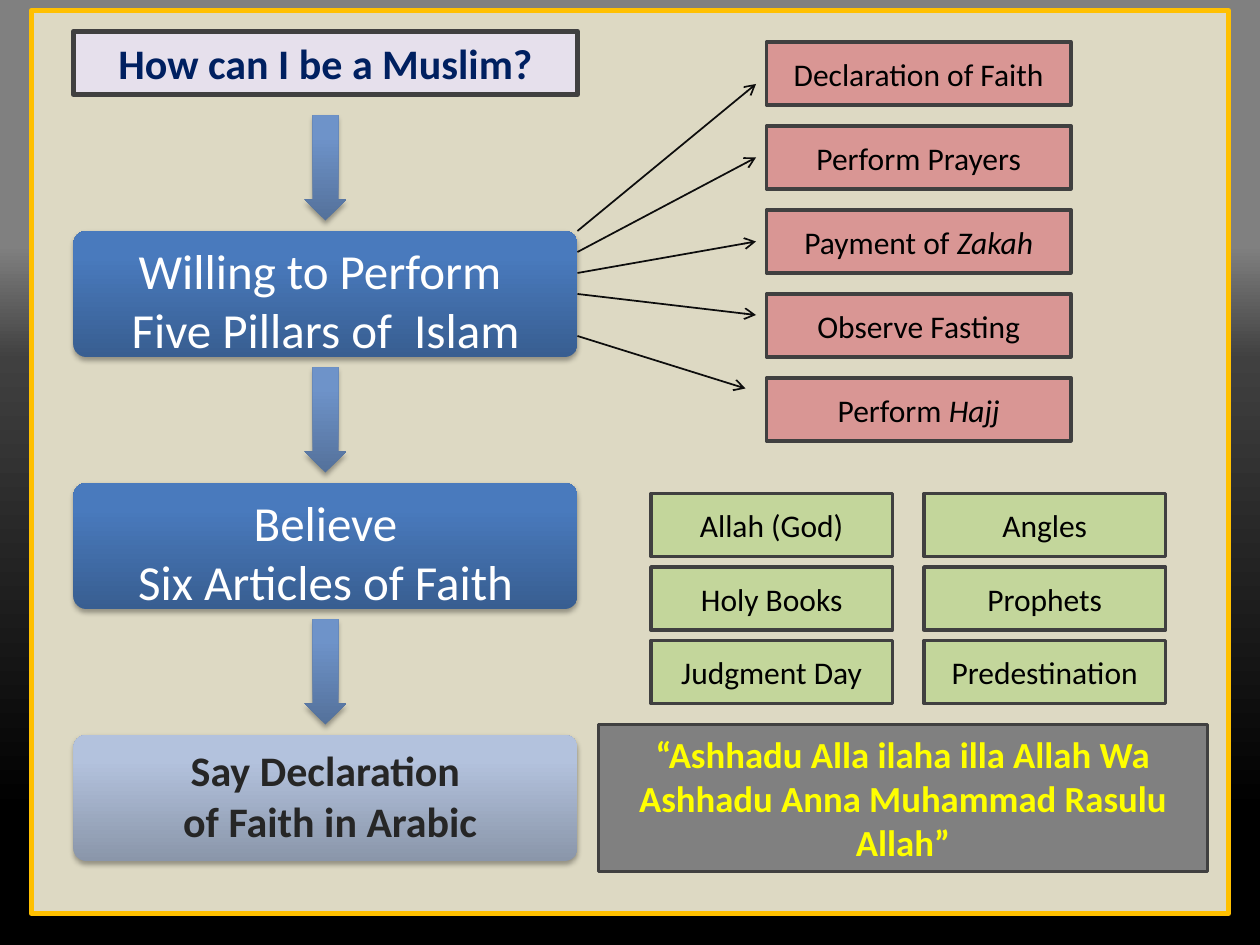
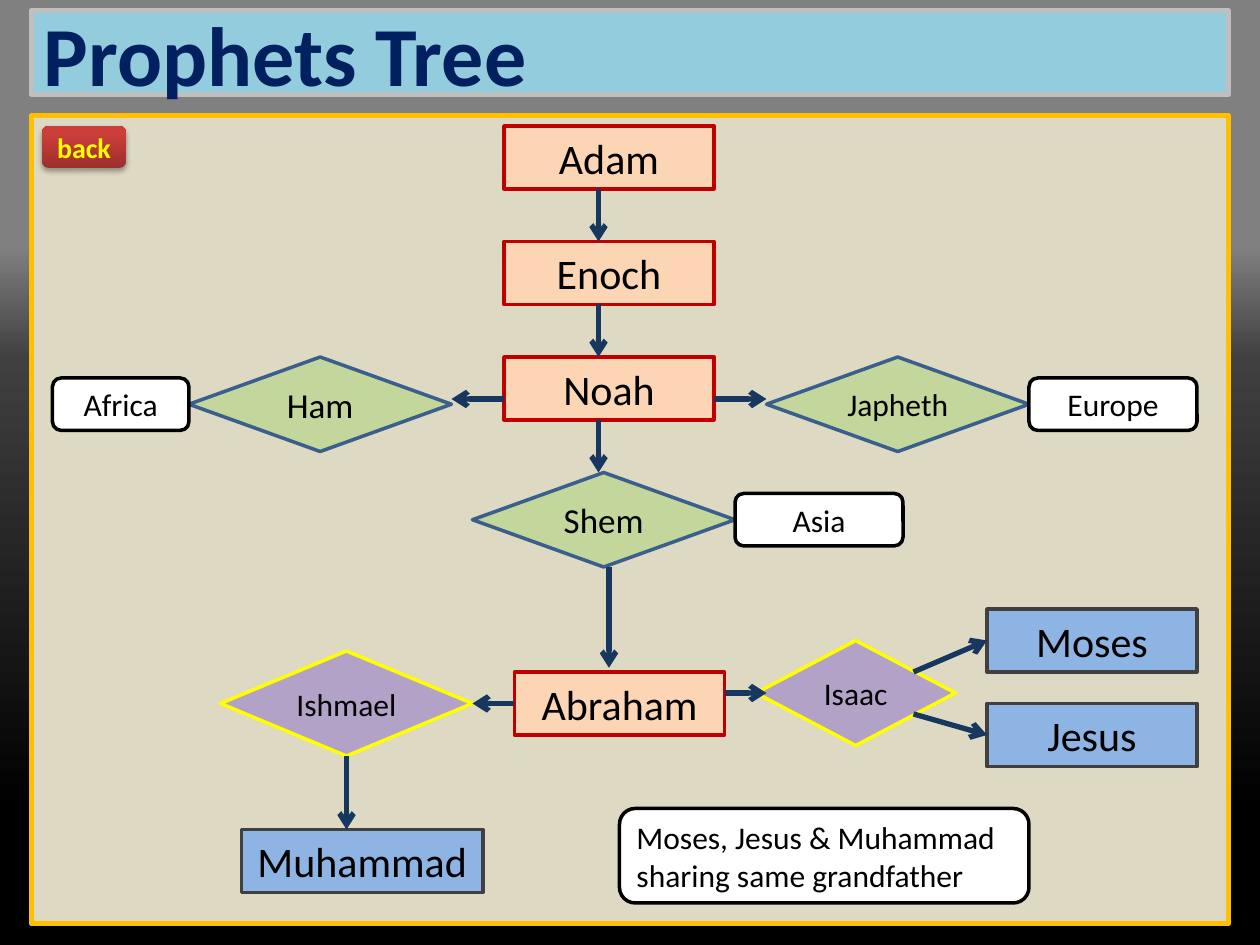
from copy import deepcopy
from dataclasses import dataclass
from typing import NamedTuple

from lxml.etree import SubElement
from pptx import Presentation
from pptx.dml.color import RGBColor as Rgb
from pptx.enum.shapes import MSO_CONNECTOR as Connector, MSO_SHAPE as Kind
from pptx.enum.text import MSO_ANCHOR as Anchor, PP_ALIGN as Align
from pptx.oxml.ns import qn
from pptx.util import Cm, Pt

GRID = Cm(2.54) / 12  # every place and size below counts these steps
TOP, LEFT, BOTTOM, RIGHT = range(4)


class Style(NamedTuple):
    """A pair of fill colours makes a bottom-to-top gradient with a soft shadow."""
    fill: str | tuple
    line: str = ""
    line_width: float = 2
    size: float = 18
    color: str = "000000"
    bold: bool = False
    align: Align = Align.CENTER
    anchor: Anchor = Anchor.MIDDLE


@dataclass(frozen=True)
class Theme:
    font = "Calibri"
    backdrop = ((0.26, "808080"), (0.38, "404040"), (0.86, "000000"))
    frame = Style("DDD9C3", "FFC000", 3)
    question = Style("E6E0EC", "404040", 3, 24, "002060", True)
    title = Style("93CDDD", "BFBFBF", 3, 48, "002060", True, Align.LEFT)
    step = Style(("385E91", "497ABD"), size=28, color="FFFFFF", anchor=Anchor.TOP)
    last_step = Style(("8A96AA", "B3C2DD"), size=24, color="262626", bold=True,
                      anchor=Anchor.TOP)
    step_arrow = Style(("54719B", "6E93C9"))
    pillar = Style("D99694", "404040")
    article = Style("C3D69B", "404040")
    declaration = Style("808080", "404040", 2, 21, "FFFF00", True)
    forefather = Style("FCD5B5", "C00000", 2, 24)
    messenger = Style("8EB4E3", "404040", 2, 24)
    son_of_noah = Style("C3D69B", "3A5F8C", 2, 20)
    son_of_abraham = Style("B3A2C7", "FFFF00")
    region = Style("FFFFFF", "000000")
    note = Style("FFFFFF", "000000", align=Align.LEFT)
    back = Style(("9C2F2D", "CB3E3A"), size=16, color="FFFF00", bold=True)
    pillar_link = ("0D0D0D", 1)
    descent = ("17375E", 3)


theme = Theme()


def add_box(slide, kind, place, style, text="", italic_end=""):
    box = slide.shapes.add_shape(kind, *(round(n * GRID) for n in place))
    box.shadow.inherit = False
    if isinstance(style.fill, tuple):
        box.fill.gradient()
        box.fill.gradient_angle = 90
        for stop, position, color in zip(box.fill.gradient_stops, (0, 0.8), style.fill):
            stop.position = position
            stop.color.rgb = Rgb.from_string(color)
        effects = box.element.spPr.find(qn("a:effectLst"))
        shadow = SubElement(effects, qn("a:outerShdw"), blurRad="39370", dist="22860",
                            dir="5400000", rotWithShape="0")
        shade = SubElement(shadow, qn("a:srgbClr"), val="000000")
        SubElement(shade, qn("a:alpha"), val="35000")
    else:
        box.fill.solid()
        box.fill.fore_color.rgb = Rgb.from_string(style.fill)
    if style.line:
        box.line.color.rgb = Rgb.from_string(style.line)
        box.line.width = Pt(style.line_width)
    else:
        box.line.fill.background()
    if not text:
        return box

    frame = box.text_frame
    frame.text = text
    frame.word_wrap = kind != Kind.DIAMOND
    frame.vertical_anchor = style.anchor
    if italic_end:
        ending = frame.paragraphs[0].add_run()
        ending.text = italic_end
        ending.font.italic = True
    for paragraph in frame.paragraphs:
        paragraph.alignment = style.align
        for run in paragraph.runs:
            run.font.name = theme.font
            run.font.size = Pt(style.size)
            run.font.bold = style.bold
            run.font.color.rgb = Rgb.from_string(style.color)
    return box


def add_arrow(slide, start, end, look):
    """Draw an arrow; each end is a grid point or a (shape, side) to join."""
    joins = [isinstance(point[0], (int, float)) is False for point in (start, end)]
    points = [(0, 0) if joined else point for joined, point in zip(joins, (start, end))]
    arrow = slide.shapes.add_connector(
        Connector.STRAIGHT, *(round(n * GRID) for point in points for n in point))
    if joins[0]:
        arrow.begin_connect(*start)
    if joins[1]:
        arrow.end_connect(*end)
    color, width = look
    arrow.line.color.rgb = Rgb.from_string(color)
    arrow.line.width = Pt(width)
    properties = arrow.element.spPr
    SubElement(properties.find(qn("a:ln")), qn("a:tailEnd"), type="arrow")
    SubElement(properties, qn("a:effectLst"))


deck = Presentation()
deck.slide_width, deck.slide_height = Cm(25.4), Cm(19.05)
blank = deck.slide_layouts[6]

# Shared backdrop
backdrop = deck.slide_master.background.fill
backdrop.gradient()
backdrop.gradient_angle = 270
stops = deck.slide_master.element.find(".//" + qn("a:gsLst"))
stops.append(deepcopy(stops[0]))
for stop, (position, color) in zip(backdrop.gradient_stops, theme.backdrop):
    stop.position = position
    stop.color.rgb = Rgb.from_string(color)

# Slide 1: becoming a Muslim
path_slide = deck.slides.add_slide(blank)
add_box(path_slide, Kind.RECTANGLE, (3, 1, 114, 86), theme.frame)
add_box(path_slide, Kind.RECTANGLE, (7, 3, 48, 6), theme.question, "How can I be a Muslim?")

steps = []
for row, (style, text) in enumerate((
    (theme.step, "Willing to Perform \nFive Pillars of  Islam"),
    (theme.step, "Believe\nSix Articles of Faith"),
    (theme.last_step, "Say Declaration\n of Faith in Arabic"),
)):
    top = 22 + 24 * row
    step = add_box(path_slide, Kind.ROUNDED_RECTANGLE, (7, top, 48, 12), style, text)
    step.adjustments[0] = 0.1
    steps.append(step)
    step_arrow = add_box(path_slide, Kind.DOWN_ARROW, (29, top - 11, 4, 10), theme.step_arrow)
    step_arrow.adjustments[0] = 0.6

pillars = (
    ("Declaration of Faith", "", (55, 22), (72, 8)),
    ("Perform Prayers", "", (55, 24), (72, 15)),
    ("Payment of ", "Zakah", (55, 26), (72, 23)),
    ("Observe Fasting", "", (steps[0], RIGHT), (72, 30)),
    ("Perform ", "Hajj", (55, 32), (71, 37)),
)
for row, (pillar, arabic, start, end) in enumerate(pillars):
    add_box(path_slide, Kind.RECTANGLE, (73, 4 + 8 * row, 29, 6), theme.pillar, pillar, arabic)
    add_arrow(path_slide, start, end, theme.pillar_link)

articles = ("Allah (God)", "Angles", "Holy Books", "Prophets", "Judgment Day", "Predestination")
for index, article in enumerate(articles):
    row, column = divmod(index, 2)
    add_box(path_slide, Kind.RECTANGLE, (62 + 26 * column, 47 + 7 * row, 23, 6),
            theme.article, article)

add_box(path_slide, Kind.RECTANGLE, (57, 69, 58, 14), theme.declaration,
        "“Ashhadu Alla ilaha illa Allah Wa Ashhadu Anna Muhammad Rasulu Allah”")

# Slide 2: the prophets' family tree
tree_slide = deck.slides.add_slide(blank)
add_box(tree_slide, Kind.RECTANGLE, (3, 1, 114, 8), theme.title, "Prophets Tree")
add_box(tree_slide, Kind.RECTANGLE, (3, 11, 114, 77), theme.frame)

small_name = theme.son_of_noah._replace(size=18)
family = {}
for kind, style, name, place in (
    (Kind.RECTANGLE, theme.forefather, "Adam", (48, 12, 20, 6)),
    (Kind.RECTANGLE, theme.forefather, "Enoch", (48, 23, 20, 6)),
    (Kind.RECTANGLE, theme.forefather, "Noah", (48, 34, 20, 6)),
    (Kind.RECTANGLE, theme.forefather, "Abraham", (49, 64, 20, 6)),
    (Kind.RECTANGLE, theme.messenger, "Moses", (94, 58, 20, 6)),
    (Kind.RECTANGLE, theme.messenger, "Jesus", (94, 67, 20, 6)),
    (Kind.RECTANGLE, theme.messenger, "Muhammad", (23, 79, 23, 6)),
    (Kind.DIAMOND, theme.son_of_noah, "Ham", (18, 34, 25, 9)),
    (Kind.DIAMOND, theme.son_of_noah, "Shem", (45, 45, 25, 9)),
    (Kind.DIAMOND, small_name, "Japheth", (73, 34, 25, 9)),
    (Kind.DIAMOND, theme.son_of_abraham, "Ishmael", (21, 62, 24, 10)),
    (Kind.DIAMOND, theme.son_of_abraham, "Isaac", (72, 61, 19, 10)),
    (Kind.ROUNDED_RECTANGLE, theme.region, "Africa", (5, 36, 13, 5)),
    (Kind.ROUNDED_RECTANGLE, theme.region, "Asia", (70, 47, 16, 5)),
    (Kind.ROUNDED_RECTANGLE, theme.region, "Europe", (98, 36, 16, 5)),
):
    family[name] = add_box(tree_slide, kind, place, style, name)

for start, end in (
    ((57, 18), (57, 23)),
    ((57, 29), (57, 34)),
    ((57, 40), (57, 45)),
    ((48, 38), (43, 38)),
    ((68, 38), (73, 38)),
    ((58, 54), (58, 63.6)),
    ((family["Abraham"], LEFT), (family["Ishmael"], RIGHT)),
    ((69, 66), (73, 66)),
    ((family["Ishmael"], BOTTOM), (33, 79)),
    ((87, 64), (family["Moses"], LEFT)),
    ((87, 68), (family["Jesus"], LEFT)),
):
    add_arrow(tree_slide, start, end, theme.descent)

add_box(tree_slide, Kind.ROUNDED_RECTANGLE, (59, 77, 39, 9), theme.note,
        "Moses, Jesus & Muhammad sharing same grandfather")
add_box(tree_slide, Kind.ROUNDED_RECTANGLE, (4, 12, 8, 4), theme.back, "back")

deck.save("out.pptx")
